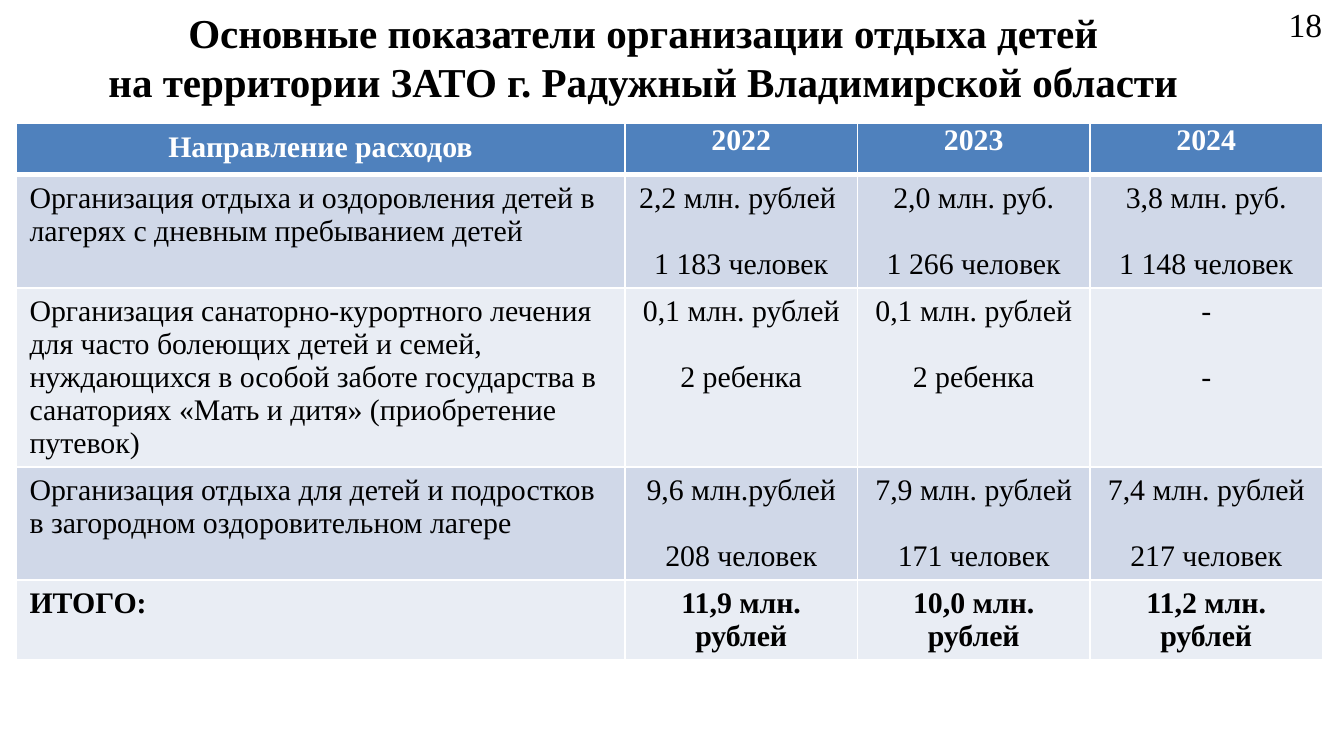
import pptx
import pptx.dml.color
import pptx.enum.text
import pptx.oxml
import pptx.oxml.ns
import pptx.util

Inches = pptx.util.Inches
Pt = pptx.util.Pt
ALIGN = pptx.enum.text.PP_ALIGN
ANCHOR = pptx.enum.text.MSO_ANCHOR

FONT = "Times New Roman"
BLACK, WHITE = "000000", "FFFFFF"
HEADER_FILL = "4F81BD"
BAND_FILLS = ["D0D8E8", "E9EDF4"]
COLUMN_WIDTHS = [4.53, 1.73, 1.73, 1.73]
ROW_HEIGHTS = [0.38, 0.72, 1.12, 0.69, 0.43]
LINE_GAP = 17.8  # about one line of 16 pt text

TITLE_LINES = [
    "Основные показатели организации отдыха детей",
    "на территории ЗАТО г.\u00a0Радужный Владимирской области",
]
# Each cell is a list of paragraphs
ROWS = [
    [["Направление расходов"], ["2022"], ["2023"], ["2024"]],
    [["Организация отдыха и оздоровления детей в лагерях с дневным пребыванием детей"],
     ["2,2 млн. рублей ", "1 183 человек"],
     ["2,0 млн. руб.", "1 266 человек"],
     ["3,8 млн. руб.", "1 148 человек"]],
    [["Организация санаторно-курортного лечения для часто болеющих детей и семей, "
      "нуждающихся в особой заботе государства в санаториях "
      "«Мать и дитя»\u00a0(приобретение путевок)"],
     ["0,1 млн. рублей", "2 ребенка"],
     ["0,1 млн. рублей", "2 ребенка"],
     ["-", "-"]],
    [["Организация отдыха для детей и подростков в загородном оздоровительном лагере"],
     ["9,6 млн.рублей", "208 человек"],
     ["7,9 млн. рублей", "171 человек"],
     ["7,4 млн. рублей", "217 человек"]],
    [["ИТОГО:"], ["11,9 млн. рублей"], ["10,0 млн. рублей"], ["11,2 млн. рублей"]],
]


def color(value):
    return pptx.dml.color.RGBColor.from_string(value)


def add_span(para, text, size, ink=BLACK, bold=False):
    span = para.add_run()
    span.text = text
    span.font.name = FONT
    span.font.size = Pt(size)
    span.font.bold = bold
    span.font.color.rgb = color(ink)


def set_borders(cell, widths):
    """Draw white cell borders; widths are given for left, right, top, bottom."""
    properties = cell._tc.get_or_add_tcPr()
    for index, (side, width) in enumerate(zip("LRTB", widths)):
        line = pptx.oxml.parse_xml(
            f'<a:ln{side} {pptx.oxml.ns.nsdecls("a")} w="{Pt(width)}">'
            f'<a:solidFill><a:srgbClr val="{WHITE}"/></a:solidFill></a:ln{side}>')
        properties.insert(index, line)


def place_title(page, left, top, width, height):
    box = page.shapes.title
    box.left, box.top = Inches(left), Inches(top)
    box.width, box.height = Inches(width), Inches(height)
    frame = box.text_frame
    frame.word_wrap = True
    frame.vertical_anchor = ANCHOR.MIDDLE
    para = frame.paragraphs[0]
    para.alignment = ALIGN.CENTER
    for index, text in enumerate(TITLE_LINES):
        if index:
            para.add_line_break()
        add_span(para, text, 22, bold=True)


def fill_cell(cell, texts, row, column):
    header, total = row == 0, row == len(ROWS) - 1
    cell.fill.solid()
    cell.fill.fore_color.rgb = color(HEADER_FILL if header else BAND_FILLS[(row - 1) % 2])
    set_borders(cell, [1, 1, 3 if row == 1 else 1, 3 if header else 1])
    if header and column:
        cell.margin_left = cell.margin_right = Inches(0.07)
        cell.margin_top = cell.margin_bottom = 0
    frame = cell.text_frame
    for index, text in enumerate(texts):
        para = frame.add_paragraph() if index else frame.paragraphs[0]
        para.alignment = ALIGN.CENTER if header or column else ALIGN.LEFT
        if index:
            para.space_before = Pt(LINE_GAP)
        add_span(para, text, 16, WHITE if header else BLACK, header or total)


def place_table(page, left, top):
    table = page.shapes.add_table(
        len(ROWS), len(COLUMN_WIDTHS), Inches(left), Inches(top),
        Inches(sum(COLUMN_WIDTHS)), Inches(sum(ROW_HEIGHTS))).table
    for column, width in zip(table.columns, COLUMN_WIDTHS):
        column.width = Inches(width)
    for row, height in zip(table.rows, ROW_HEIGHTS):
        row.height = Inches(height)
    for row, cells in enumerate(ROWS):
        for column, texts in enumerate(cells):
            fill_cell(table.cell(row, column), texts, row, column)


def place_page_number(page, left, top, width, height):
    box = page.shapes.add_textbox(Inches(left), Inches(top), Inches(width), Inches(height))
    box.text_frame.word_wrap = True
    box.text_frame.auto_size = pptx.enum.text.MSO_AUTO_SIZE.SHAPE_TO_FIT_TEXT
    add_span(box.text_frame.paragraphs[0], "18", 18)


def main():
    deck = pptx.Presentation()
    # Widescreen page, 16 to 9
    deck.slide_width = Inches(10)
    deck.slide_height = deck.slide_width * 9 // 16
    page = deck.slides.add_slide(deck.slide_layouts[5])
    place_title(page, 0, 0, 9.57, 0.84)
    place_table(page, 0.12, 0.92)
    place_page_number(page, 9.49, -0.02, 0.51, 0.4)
    deck.save("out.pptx")


if __name__ == "__main__":
    main()
